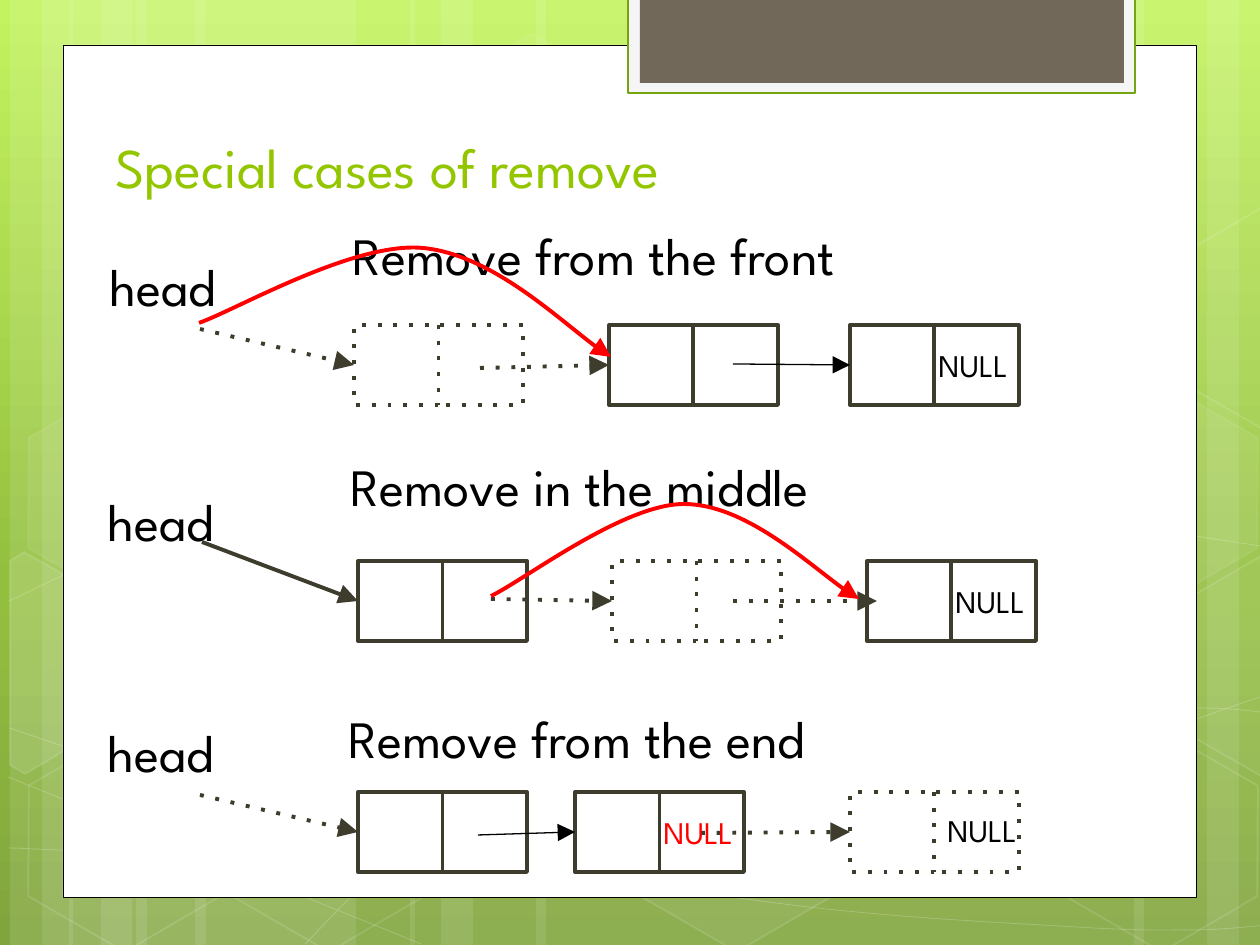
import copy

from pptx import Presentation
from pptx import util as u
from pptx.dml.color import RGBColor
from pptx.enum import shapes, text
from pptx.oxml import ns, xmlchemy

PX = 7257
FONT = "League Spartan"
WHITE, BLACK, DARK, RED, LIME = "FFFFFF", "000000", "3E3D2D", "FF0000", "94C600"
RECTANGLE, HEXAGON = shapes.MSO_SHAPE.RECTANGLE, shapes.MSO_SHAPE.HEXAGON
STRAIGHT = shapes.MSO_CONNECTOR.STRAIGHT
TOP, LEFT, BOTTOM = 0, 1, 2
PAGE_H = 945
NODE_W, NODE_H = 169, 80

deck = Presentation()
deck.slide_width, deck.slide_height = u.Inches(10), u.Inches(7.5)
page = deck.slides.add_slide(deck.slide_layouts[5])


def style(shape, fill=None, line=None, width=1, fill_alpha=100, line_alpha=100, dash=None, arrow=False):
    properties = shape.element.spPr
    outline = properties.get_or_add_ln()
    if fill and fill_alpha:
        shape.fill.solid()
        shape.fill.fore_color.rgb = RGBColor.from_string(fill)
    elif hasattr(shape, "fill"):
        shape.fill.background()
    if line:
        shape.line.width = u.Pt(width)
        shape.line.fill.solid()
        shape.line.fill.fore_color.rgb = RGBColor.from_string(line)
    else:
        shape.line.fill.background()
    for parent, alpha in ((properties, fill_alpha), (outline, line_alpha)):
        if 0 < alpha < 100:
            opacity = xmlchemy.OxmlElement("a:alpha")
            opacity.set("val", str(alpha * 1000))
            parent.find(ns.qn("a:solidFill"))[0].append(opacity)
    if dash:
        pattern = xmlchemy.OxmlElement("a:prstDash")
        pattern.set("val", dash)
        outline.append(pattern)
    if arrow:
        head = xmlchemy.OxmlElement("a:tailEnd")
        for key, value in (("type", "triangle"), ("w", "lg"), ("len", "lg")):
            head.set(key, value)
        outline.append(head)
    properties.append(xmlchemy.OxmlElement("a:effectLst"))


def smooth_curve(knots):
    padded = [knots[0], *knots, knots[-1]]
    points = []
    for before, start, end, after in zip(padded, padded[1:], padded[2:], padded[3:]):
        leave = [s + (e - b) / 6 for b, s, e in zip(before, start, end)]
        arrive = [e - (a - s) / 6 for s, e, a in zip(start, end, after)]
        points += [leave, arrive, end]
    builder = page.shapes.build_freeform(*knots[0], scale=PX)
    builder.add_line_segments(points, close=False)
    curve = builder.convert_to_shape()
    route = curve.element.find(".//" + ns.qn("a:path"))
    steps = route.findall(ns.qn("a:lnTo"))
    for first in range(0, len(steps), 3):
        bend = xmlchemy.OxmlElement("a:cubicBezTo")
        for step in steps[first:first + 3]:
            bend.append(step[0])
            route.remove(step)
        route.append(bend)
    return curve


backdrop = page.background.fill
backdrop.gradient()
backdrop.gradient_angle = 270
stop_list = page.element.find(".//" + ns.qn("a:gsLst"))
stop_list.insert(1, copy.deepcopy(stop_list[0]))
for stop, (position, color) in zip(backdrop.gradient_stops, ((0, "C3F35F"), (0.62, "93BF3F"), (1, "81A53E"))):
    stop.position = position
    stop.color.rgb = RGBColor.from_string(color)

stripe_bundles = [
    {"wide": (136, 220), "narrow": 10, "medium": 42},
    {"wide": (195, 220), "narrow": 69, "medium": 101},
    {"wide": (924, 220), "narrow": 1207, "medium": 1134},
    {"wide": (536, 388), "narrow": 410, "medium": 441},
]
for bundle in stripe_bundles:
    for left, width in (bundle["wide"], (bundle["narrow"], 63), (bundle["medium"], 105)):
        stripe = page.shapes.add_shape(RECTANGLE, left * PX, 0, width * PX, PAGE_H * PX)
        style(stripe, WHITE, fill_alpha=10)

wave_knots = {
    "falling then rising": [(9, 848), (239, 854), (577, 838), (998, 777), (1269, 694)],
    "arch": [(9, 601), (152, 543), (437, 488), (824, 488), (1269, 547)],
    "corner": [(8, 777), (421, 944)],
    "descent": [(9, 728), (161, 776), (450, 848), (791, 905), (1075, 927), (1191, 930), (1269, 925)],
    "ascent": [(305, 944), (381, 871), (489, 805), (592, 767), (766, 728), (1000, 708), (1201, 708), (1268, 713)],
}
for knots in wave_knots.values():
    style(smooth_curve(knots), line=WHITE, width=0.5, line_alpha=20)

COLUMN_STEP, ROW_STEP, LOWEST_ROW = 102, 174, 745
honeycombs = {
    14: [(4, 4, 4, 8), (6, 0, 6, 12), (0, 0, 0, 12), (0, 2, 7, 8), (2, 0, 0, 12)],
    949: [(0, 1, 10, 12), (1, 0, 0, 12), (1, 2, 7, 8)],
}
for origin, cells in honeycombs.items():
    for column, row, fill_alpha, line_alpha in cells:
        left, top = origin + column * COLUMN_STEP, LOWEST_ROW - row * ROW_STEP
        cell = page.shapes.add_shape(HEXAGON, left * PX, top * PX, 221 * PX, 192 * PX)
        cell.adjustments[0] = 0.285
        cell.rotation = 30
        style(cell, WHITE, WHITE, fill_alpha=fill_alpha, line_alpha=line_alpha)

left_cut = [(10, 561), (24, 552), (121, 607), (120, 718), (25, 774), (10, 765)]
right_cut = [(1167, 611), (1261, 556), (1271, 562), (1271, 772), (1263, 777), (1167, 722)]
for corners, rows_up, fill_alpha in ((left_cut, 0, 10), (right_cut, 0, 4), (right_cut, 2, 0)):
    placed = [(x, y - rows_up * ROW_STEP) for x, y in corners]
    builder = page.shapes.build_freeform(*placed[0], scale=PX)
    builder.add_line_segments(placed[1:])
    style(builder.convert_to_shape(), WHITE, WHITE, fill_alpha=fill_alpha, line_alpha=12)

panels = [
    ((63, 45, 1134, 853), WHITE, BLACK, 0.5),
    ((628, -2, 507, 95), "F5F5F5", "74A510", 1.25),
    ((640, -2, 484, 85), "71685A", None, 0),
]
for (left, top, width, height), fill, line, line_width in panels:
    panel = page.shapes.add_shape(RECTANGLE, left * PX, top * PX, width * PX, height * PX)
    style(panel, fill, line, line_width)

title = page.shapes.title
page.shapes.element.append(title.element)
title.left, title.top, title.width, title.height = 103 * PX, 126 * PX, 968 * PX, 158 * PX
title.text_frame.auto_size = text.MSO_AUTO_SIZE.NONE
title.text_frame.vertical_anchor = text.MSO_ANCHOR.TOP
para = title.text_frame.paragraphs[0]
para.alignment = text.PP_ALIGN.LEFT
span = para.add_run()
span.text = "Special cases of remove"
span.font.size = u.Pt(32)
span.font.name = FONT
span.font.color.rgb = RGBColor.from_string(LIME)

solid = {"line": DARK, "width": 2.25}
dotted = {**solid, "dash": "dot"}
thin = {"line": BLACK, "width": 0.75}
cases = [
    {"caption": ("Remove from the front", 340, 210), "head": (97, 241), "top": 325,
     "nodes": [(354, dotted), (609, solid), (850, solid)],
     "arrows": [((200, 329), 0, dotted), ((480, 368), 1, dotted), ((733, 364), 2, thin)],
     "nulls": [(2, 0, 8, BLACK)],
     "bypass": [(199, 323), (422, 248), (611, 357)]},
    {"caption": ("Remove in the middle", 338, 441), "head": (95, 476), "top": 561,
     "nodes": [(358, solid), (612, dotted), (867, solid)],
     "arrows": [((202, 542), 0, solid), ((491, 599), 1, dotted), ((733, 601), (877, 601), dotted)],
     "nulls": [(2, 0, 8, BLACK)],
     "bypass": [(491, 596), (684, 504), (859, 599)]},
    {"caption": ("Remove from the end", 336, 693), "head": (95, 707), "top": 792,
     "nodes": [(358, solid), (575, solid), (850, dotted)],
     "arrows": [((200, 795), 0, dotted), ((478, 835), 1, thin), ((701, 833), 2, dotted)],
     "nulls": [(1, 0, 8, RED), (2, 9, 6, BLACK)],
     "bypass": None},
]
for case in cases:
    boxes = []
    for left, pen in case["nodes"]:
        box = page.shapes.add_shape(RECTANGLE, left * PX, case["top"] * PX, NODE_W * PX, NODE_H * PX)
        style(box, **pen)
        divider = page.shapes.add_connector(STRAIGHT, 0, 0, 0, 0)
        divider.begin_connect(box, TOP)
        divider.end_connect(box, BOTTOM)
        style(divider, **pen)
        boxes.append(box)

    for (x, y), target, pen in case["arrows"]:
        joined = isinstance(target, int)
        end_x, end_y = (x, y) if joined else target
        arrow = page.shapes.add_connector(STRAIGHT, x * PX, y * PX, end_x * PX, end_y * PX)
        if joined:
            arrow.end_connect(boxes[target], LEFT)
        style(arrow, arrow=True, **pen)

    labels = [(*case["caption"], 675, 30, BLACK), ("head", *case["head"], 504, 30, BLACK)]
    for node, shift, drop, color in case["nulls"]:
        cell_left = case["nodes"][node][0] + NODE_W // 2
        labels.append(("NULL", cell_left - 8 + shift, case["top"] + drop, 168, 18, color))
    for wording, left, top, width, size, color in labels:
        label = page.shapes.add_textbox(left * PX, top * PX, width * PX, 63 * PX)
        frame = label.text_frame
        frame.word_wrap = True
        frame.margin_left = frame.margin_right = frame.margin_top = frame.margin_bottom = u.Inches(0.1)
        span = frame.paragraphs[0].add_run()
        span.text = wording
        span.font.size = u.Pt(size)
        span.font.name = FONT
        span.font.color.rgb = RGBColor.from_string(color)

    if case["bypass"]:
        style(smooth_curve(case["bypass"]), line=RED, width=2.25, arrow=True)

deck.save("out.pptx")
